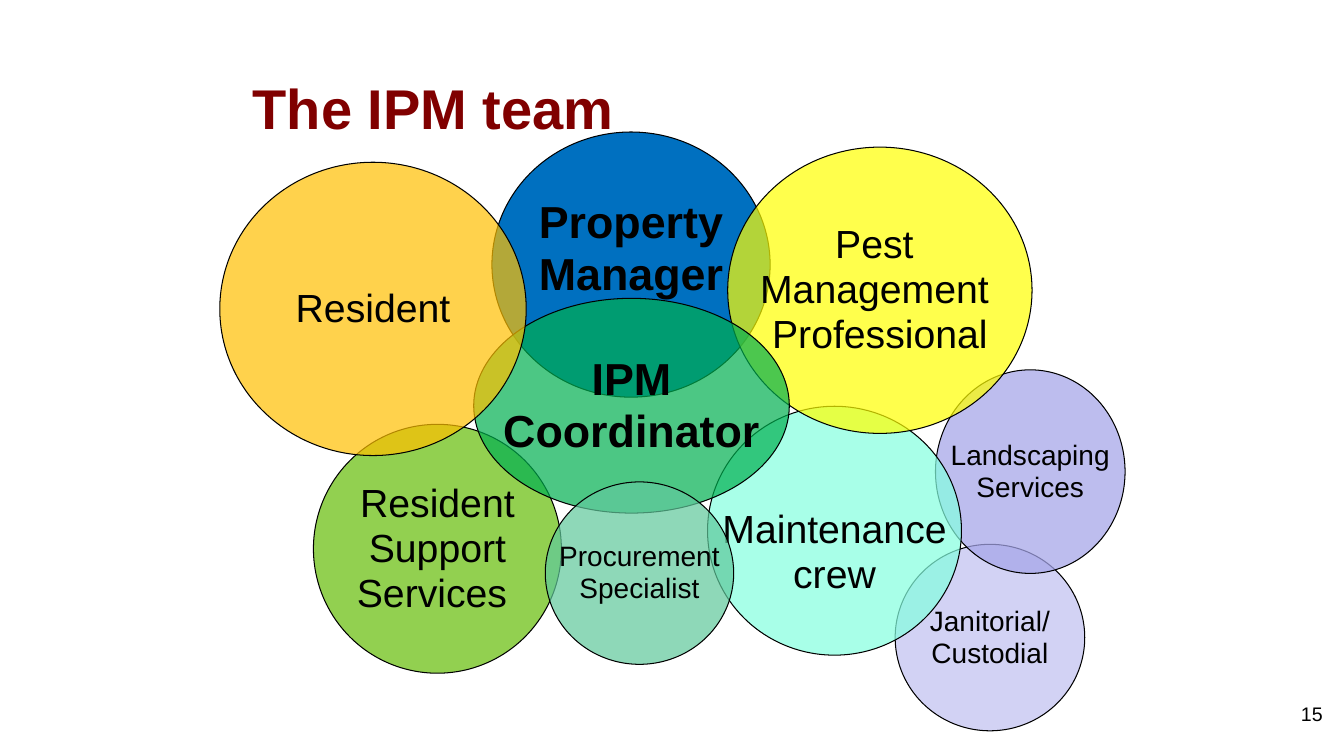
from lxml import etree
from pptx import Presentation
from pptx.dml.color import RGBColor
from pptx.enum.shapes import MSO_SHAPE
from pptx.enum.text import MSO_ANCHOR, PP_ALIGN
from pptx.oxml.ns import qn
from pptx.util import Pt

OVAL = MSO_SHAPE.OVAL
TOP, MIDDLE = MSO_ANCHOR.TOP, MSO_ANCHOR.MIDDLE
LEFT, CENTER, RIGHT = PP_ALIGN.LEFT, PP_ALIGN.CENTER, PP_ALIGN.RIGHT

FONT = "Arial"
COLORS = {
    "title": "800000", "black": "000000",
    "blue": "0070C0", "pale lilac": "D2D2F4", "lilac": "A5A5E9",
    "aqua": "85FFE0", "lime": "92D050", "yellow": "FFFF00",
    "green": "00B050", "sea green": "60C99C", "amber": "FFC000",
}
TITLE = "The IPM team"
SLIDE_NUMBER = "15"
LARGE, MEDIUM, SMALL = 32, 28, 20

# Back to front: lines, size, colour, opacity %, (left, top, width, height),
# (top inset, bottom inset). Lead roles in the large size are bold.
ROLES = [
    (["Property", "Manager"], LARGE, "blue", 100, (351.4, 94.3, 198.7, 189.4), (0, 22)),
    (["Janitorial/", "Custodial"], SMALL, "pale lilac", 100, (639.4, 388.8, 135.4, 133.2), (0, 0)),
    (["Landscaping", "Services"], SMALL, "lilac", 73, (668.2, 264.2, 135.4, 145.4), (0, 0)),
    (["Maintenance", "crew"], MEDIUM, "aqua", 71, (505.4, 290.2, 181.4, 177.8), (31, 0)),
    (["Resident", "Support", "Services "], MEDIUM, "lime", 100, (223.9, 303.1, 177.1, 177.8), (0, 0)),
    (["Pest ", "Management ", "Professional"], MEDIUM, "yellow", 70, (519.8, 105.1, 217.4, 204.5), (0, 0)),
    (["IPM", "Coordinator"], LARGE, "green", 70, (338.4, 213.1, 225.4, 153.4), (0, 0)),
    (["Procurement", "Specialist"], SMALL, "sea green", 71, (389.5, 344.2, 134.6, 130.3), (0, 0)),
    (["Resident"], MEDIUM, "amber", 70, (157, 115.9, 218.9, 209.5), (0, 0)),
]


def rgb(name):
    return RGBColor.from_string(COLORS[name])


def write_lines(frame, lines, size, color="black", bold=False, align=LEFT, spacing=1.0):
    for index, line in enumerate(lines):
        paragraph = frame.paragraphs[0] if index == 0 else frame.add_paragraph()
        paragraph.alignment = align
        paragraph.line_spacing = spacing
        run = paragraph.add_run()
        run.text = line
        run.font.name = FONT
        run.font.size = Pt(size)
        run.font.bold = bold
        run.font.color.rgb = rgb(color)


def add_label(slide, text, box, size, anchor=TOP, **style):
    frame = slide.shapes.add_textbox(*map(Pt, box)).text_frame
    frame.word_wrap = True
    frame.vertical_anchor = anchor
    write_lines(frame, [text], size, **style)


def set_opacity(shape, percent):
    color = shape.fill._xPr.find(qn("a:solidFill"))[0]
    etree.SubElement(color, qn("a:alpha")).set("val", str(percent * 1000))


def add_role(slide, lines, size, color, opacity, box, insets):
    shape = slide.shapes.add_shape(OVAL, *map(Pt, box))
    shape.shadow.inherit = False
    shape.fill.solid()
    shape.fill.fore_color.rgb = rgb(color)
    if opacity < 100:
        set_opacity(shape, opacity)
    shape.line.color.rgb = rgb("black")
    shape.line.width = Pt(0.75)
    frame = shape.text_frame
    frame.word_wrap = False
    frame.vertical_anchor = MIDDLE
    frame.margin_left = frame.margin_right = 0
    frame.margin_top, frame.margin_bottom = map(Pt, insets)
    write_lines(frame, lines, size, bold=size == LARGE, align=CENTER, spacing=0.96)


def main():
    presentation = Presentation()
    presentation.slide_width, presentation.slide_height = Pt(960), Pt(540)
    slide = presentation.slides.add_slide(presentation.slide_layouts[6])
    add_label(slide, TITLE, (173.5, 41, 612, 77.8), 40, anchor=MIDDLE,
              color="title", bold=True, spacing=0.86)
    add_label(slide, SLIDE_NUMBER, (751.7, 498.2, 200.2, 36), 14, align=RIGHT)
    for role in ROLES:
        add_role(slide, *role)
    presentation.save("out.pptx")


if __name__ == "__main__":
    main()
